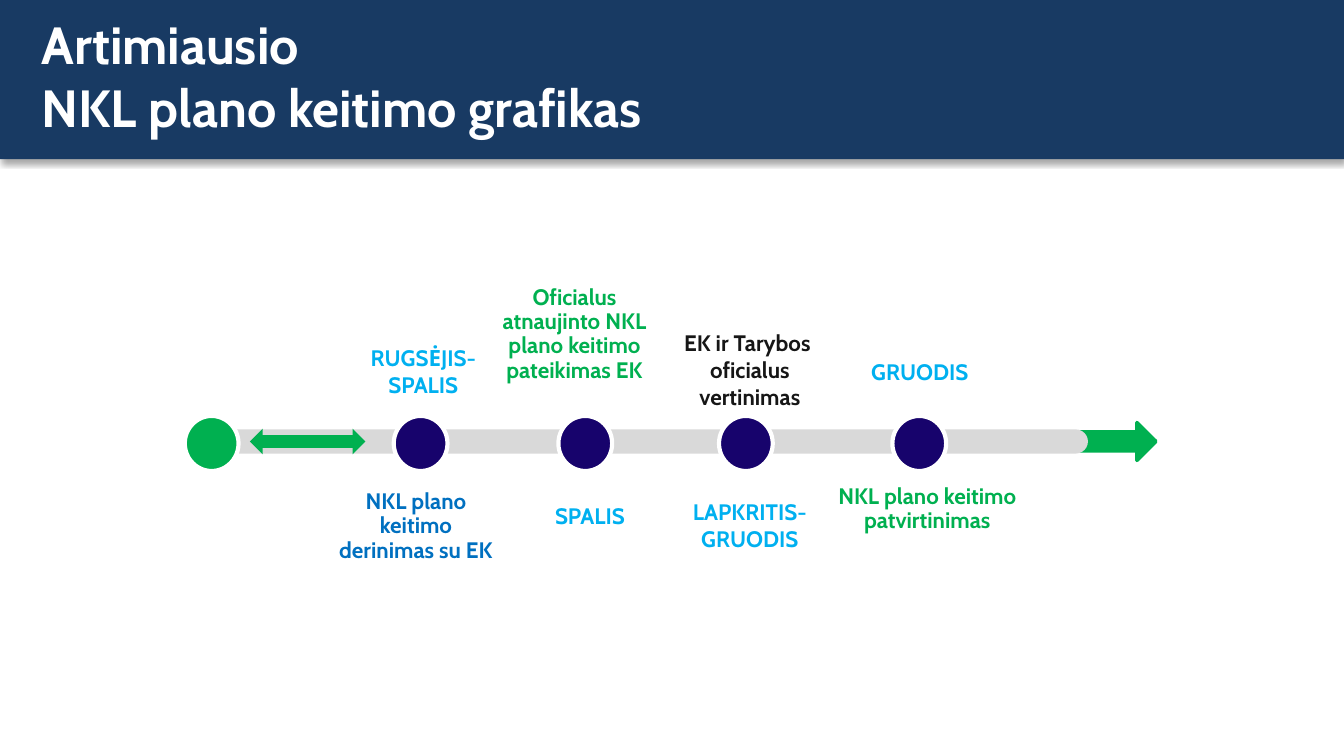
from collections import namedtuple

from lxml import etree
from pptx import Presentation
from pptx.dml.color import RGBColor
from pptx.enum.shapes import MSO_SHAPE
from pptx.enum.text import MSO_ANCHOR, MSO_AUTO_SIZE, PP_ALIGN
from pptx.oxml.ns import qn
from pptx.util import Pt

Box = namedtuple("Box", "left top width height")

PX = 4572
FONT = "Cabin"
NAVY = RGBColor(0x18, 0x3A, 0x63)
INDIGO = RGBColor(0x17, 0x03, 0x6C)
GREEN = RGBColor(0x00, 0xB0, 0x50)
SKY = RGBColor(0x00, 0xB0, 0xF0)
BLUE = RGBColor(0x00, 0x70, 0xC0)
GREY = RGBColor(0xD9, 0xD9, 0xD9)
INK = RGBColor(0x16, 0x16, 0x16)
WHITE = RGBColor(0xFF, 0xFF, 0xFF)

RECTANGLE = MSO_SHAPE.RECTANGLE
ROUNDED = MSO_SHAPE.ROUNDED_RECTANGLE
OVAL = MSO_SHAPE.OVAL
RIGHT_ARROW = MSO_SHAPE.RIGHT_ARROW
DOUBLE_ARROW = MSO_SHAPE.LEFT_RIGHT_ARROW
LEFT, CENTER = PP_ALIGN.LEFT, PP_ALIGN.CENTER
TOP, MIDDLE = MSO_ANCHOR.TOP, MSO_ANCHOR.MIDDLE
NO_FIT = MSO_AUTO_SIZE.NONE

DOT_LEFTS = (311, 556, 795, 1053)
MONTHS = (
    ("RUGSĖJIS-SPALIS", Box(235, 98, 240, 80)),
    ("SPALIS", Box(483, 334, 240, 40)),
    ("LAPKRITIS-GRUODIS", Box(718, 327, 246, 80)),
    ("GRUODIS", Box(921, 119, 346, 40)),
)
EVENTS = (
    ("NKL plano keitimo derinimas su EK", Box(205, 305, 278, 166), BLUE, 13),
    ("Oficialus atnaujinto NKL plano keitimo pateikimas EK",
     Box(439, 1, 282, 202), GREEN, 13),
    ("EK ir Tarybos \noficialus\n vertinimas ", Box(624, 66, 434, 202),
     INK, None),
    ("NKL plano keitimo patvirtinimas", Box(937, 297, 336, 94), GREEN, 13),
)


def emu(box):
    """Turn a pixel box into EMU lengths."""
    return [length * PX for length in box]


def within(area, box):
    """Shift a box by the corner of the area that holds it."""
    return Box(area.left + box.left, area.top + box.top, box.width, box.height)


def write(shape, text, size=12, color=INK, align=CENTER, anchor=TOP,
          inset=(0, 0), spacing=None):
    """Fill a shape with bold text, one paragraph per line."""
    frame = shape.text_frame
    frame.word_wrap = True
    frame.auto_size = NO_FIT
    frame.vertical_anchor = anchor
    frame.margin_left = frame.margin_right = inset[0] * PX
    frame.margin_top = frame.margin_bottom = inset[1] * PX
    frame.text = text
    for para in frame.paragraphs:
        para.alignment = align
        if spacing:
            para.line_spacing = Pt(spacing)
        for span in para.runs:
            span.font.name = FONT
            span.font.size = Pt(size)
            span.font.bold = True
            span.font.color.rgb = color


def add_label(page, box, text, **style):
    """Add a text box with formatted text."""
    write(page.shapes.add_textbox(*emu(box)), text, **style)


def add_figure(page, kind, box, fill, line=None, weight=2.25):
    """Add a flat preset shape."""
    shape = page.shapes.add_shape(kind, *emu(box))
    shape.shadow.inherit = False
    shape.fill.solid()
    shape.fill.fore_color.rgb = fill
    if line is None:
        shape.line.fill.background()
    else:
        shape.line.color.rgb = line
        shape.line.width = Pt(weight)
    return shape


def cast_shadow(shape, blur, distance, opacity):
    """Give a shape a black shadow that falls downwards."""
    effects = shape._element.spPr.find(qn("a:effectLst"))
    shadow = etree.SubElement(
        effects, qn("a:outerShdw"), blurRad=str(Pt(blur)),
        dist=str(Pt(distance)), dir="5400000", rotWithShape="0")
    color = etree.SubElement(shadow, qn("a:srgbClr"), val="000000")
    etree.SubElement(color, qn("a:alpha"), val=str(opacity * 1000))


def build_header(page, area):
    """Place the title on its dark band."""
    band = add_figure(page, RECTANGLE, area, NAVY)
    cast_shadow(band, blur=3.1, distance=1.8, opacity=35)
    title = page.shapes.title
    title._element.addprevious(band._element)
    title.left, title.top, title.width, title.height = emu(
        within(area, Box(50, 18, 1800, 188)))
    write(title, "Artimiausio \vNKL plano keitimo grafikas", size=28,
          color=WHITE, align=LEFT, anchor=MIDDLE, inset=(12, 6))


def build_timeline(page, area):
    """Draw the track with its milestones, months and events."""
    add_figure(page, RIGHT_ARROW, within(area, Box(1331, 215, 114, 56)),
               GREEN, line=GREEN, weight=2)
    track = add_figure(page, ROUNDED, within(area, Box(34, 225, 1310, 36)),
                       GREY)
    track.adjustments[0] = 0.5
    add_figure(page, DOUBLE_ARROW, within(area, Box(97, 224, 172, 38)), GREEN)
    for left in (0, *DOT_LEFTS):
        add_figure(page, OVAL, within(area, Box(left, 205, 80, 82)),
                   INDIGO if left else GREEN, line=WHITE)
    for month, box in MONTHS:
        add_label(page, within(area, box), month, color=SKY)
    for event, box, color, spacing in EVENTS:
        add_label(page, within(area, box), event, color=color,
                  inset=(20, 10), spacing=spacing)


def main():
    """Build and save the deck."""
    deck = Presentation()
    deck.slide_width, deck.slide_height = 2000 * PX, 1125 * PX
    page = deck.slides.add_slide(deck.slide_layouts[5])
    build_header(page, Box(0, 0, 2002, 237))
    build_timeline(page, Box(275, 414, 1446, 470))
    deck.save("out.pptx")


if __name__ == "__main__":
    main()
